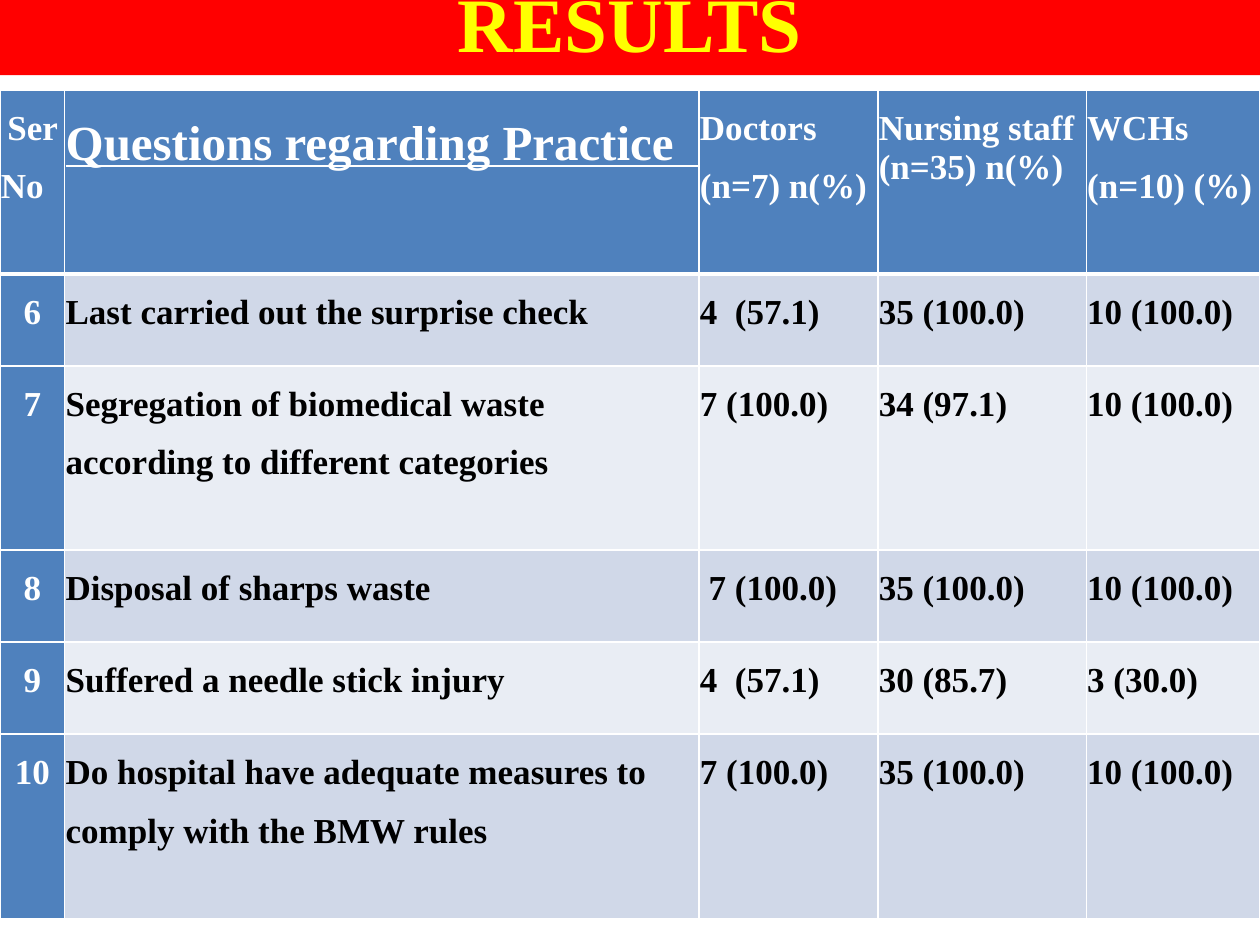
from dataclasses import dataclass

from lxml import etree
from pptx import Presentation
from pptx.dml.color import RGBColor
from pptx.enum import shapes, text
from pptx.oxml import ns
from pptx.util import Pt


@dataclass(frozen=True)
class Theme:
    font: str = "Times New Roman"
    banner: str = "FF0000"
    title: str = "FFFF00"
    header: str = "4F81BD"
    bands: tuple = ("D0D8E8", "E9EDF4")
    light: str = "FFFFFF"
    dark: str = "000000"
    title_size: float = 44
    question_size: float = 28
    body_size: float = 20


THEME = Theme()
COL_WIDTHS = (37, 362.5, 102.2, 119.1, 99.2)
ROW_UNIT = 52.6
ROW_UNITS = (2, 1, 2, 1, 1, 2)
HEADERS = (
    "Ser No\t",
    "Questions regarding Practice  ",
    "Doctors\n(n=7) n(%)",
    "Nursing staff\n(n=35) n(%)",
    "WCHs\n(n=10) (%)",
)
ANSWERS = (
    ("6", "Last carried out the surprise check", "4  (57.1)", "35 (100.0)", "10 (100.0)"),
    ("7", "Segregation of biomedical waste according to different categories",
     "7 (100.0)", "34 (97.1)", "10 (100.0)"),
    ("8", "Disposal of sharps waste", " 7 (100.0)", "35 (100.0)", "10 (100.0)"),
    ("9", "Suffered a needle stick injury", "4  (57.1)", "30 (85.7)", "3 (30.0)"),
    ("10", "Do hospital have adequate measures to comply with the BMW rules",
     "7 (100.0)", "35 (100.0)", "10 (100.0)"),
)


def rgb(color):
    return RGBColor.from_string(color)


def style_runs(p, size, color):
    for r in p.runs:
        r.font.name = THEME.font
        r.font.size = Pt(size)
        r.font.bold = True
        r.font.color.rgb = rgb(color)


def add_banner(s, title):
    sp = s.shapes.add_shape(shapes.MSO_SHAPE.RECTANGLE, Pt(0), Pt(-8), Pt(720), Pt(51))
    sp.shadow.inherit = False
    sp.fill.solid()
    sp.fill.fore_color.rgb = rgb(THEME.banner)
    sp.line.fill.background()
    tf = sp.text_frame
    tf.word_wrap = True
    tf.margin_top = Pt(29.6)
    tf.vertical_anchor = text.MSO_ANCHOR.MIDDLE
    tf.text = title
    p = tf.paragraphs[0]
    p.alignment = text.PP_ALIGN.CENTER
    p.line_spacing = Pt(16)
    style_runs(p, THEME.title_size, THEME.title)


def set_borders(cell, top, bottom):
    tc_pr = cell._tc.get_or_add_tcPr()
    for side, width in (("L", 1), ("R", 1), ("T", top), ("B", bottom)):
        ln = etree.SubElement(tc_pr, ns.qn(f"a:ln{side}"), w=str(Pt(width)))
        fill = etree.SubElement(ln, ns.qn("a:solidFill"))
        etree.SubElement(fill, ns.qn("a:srgbClr"), val=THEME.light)


def add_tab_stop(p, position):
    tabs = etree.SubElement(p._p.get_or_add_pPr(), ns.qn("a:tabLst"))
    etree.SubElement(tabs, ns.qn("a:tab"), pos=str(Pt(position)), algn="l")


def fill_cell(cell, words, fill, color):
    cell.margin_left = cell.margin_right = Pt(0.5)
    cell.margin_top = cell.margin_bottom = Pt(0)
    cell.fill.solid()
    cell.fill.fore_color.rgb = rgb(fill)
    cell.text_frame.text = words
    for p in cell.text_frame.paragraphs:
        p.line_spacing = 1.5
        style_runs(p, THEME.body_size, color)


def format_header(table):
    question = table.cell(0, 1).text_frame.paragraphs[0]
    question.alignment = text.PP_ALIGN.CENTER
    style_runs(question, THEME.question_size, THEME.light)
    question.runs[0].font.underline = True
    table.cell(0, 3).text_frame.paragraphs[1].line_spacing = 1.0


def add_results_table(s):
    rows = (HEADERS, *ANSWERS)
    table = s.shapes.add_table(
        len(rows), len(HEADERS), Pt(0), Pt(51.4),
        Pt(sum(COL_WIDTHS)), Pt(ROW_UNIT * sum(ROW_UNITS))).table
    table.horz_banding = False
    for column, width in zip(table.columns, COL_WIDTHS):
        column.width = Pt(width)
    for row, units in zip(table.rows, ROW_UNITS):
        row.height = Pt(ROW_UNIT * units)
    for i, row in enumerate(rows):
        for j, words in enumerate(row):
            cell = table.cell(i, j)
            is_heading = i == 0 or j == 0
            set_borders(cell, 3 if i == 1 else 1, 3 if i == 0 else 1)
            fill_cell(cell, words,
                      THEME.header if is_heading else THEME.bands[(i - 1) % 2],
                      THEME.light if is_heading else THEME.dark)
        number = table.cell(i, 0).text_frame.paragraphs[0]
        number.alignment = text.PP_ALIGN.CENTER
        add_tab_stop(number, 51)
    format_header(table)


def main():
    prs = Presentation()
    prs.slide_width, prs.slide_height = Pt(720), Pt(540)
    s = prs.slides.add_slide(prs.slide_layouts[6])
    add_banner(s, "RESULTS")
    add_results_table(s)
    prs.save("out.pptx")


if __name__ == "__main__":
    main()
